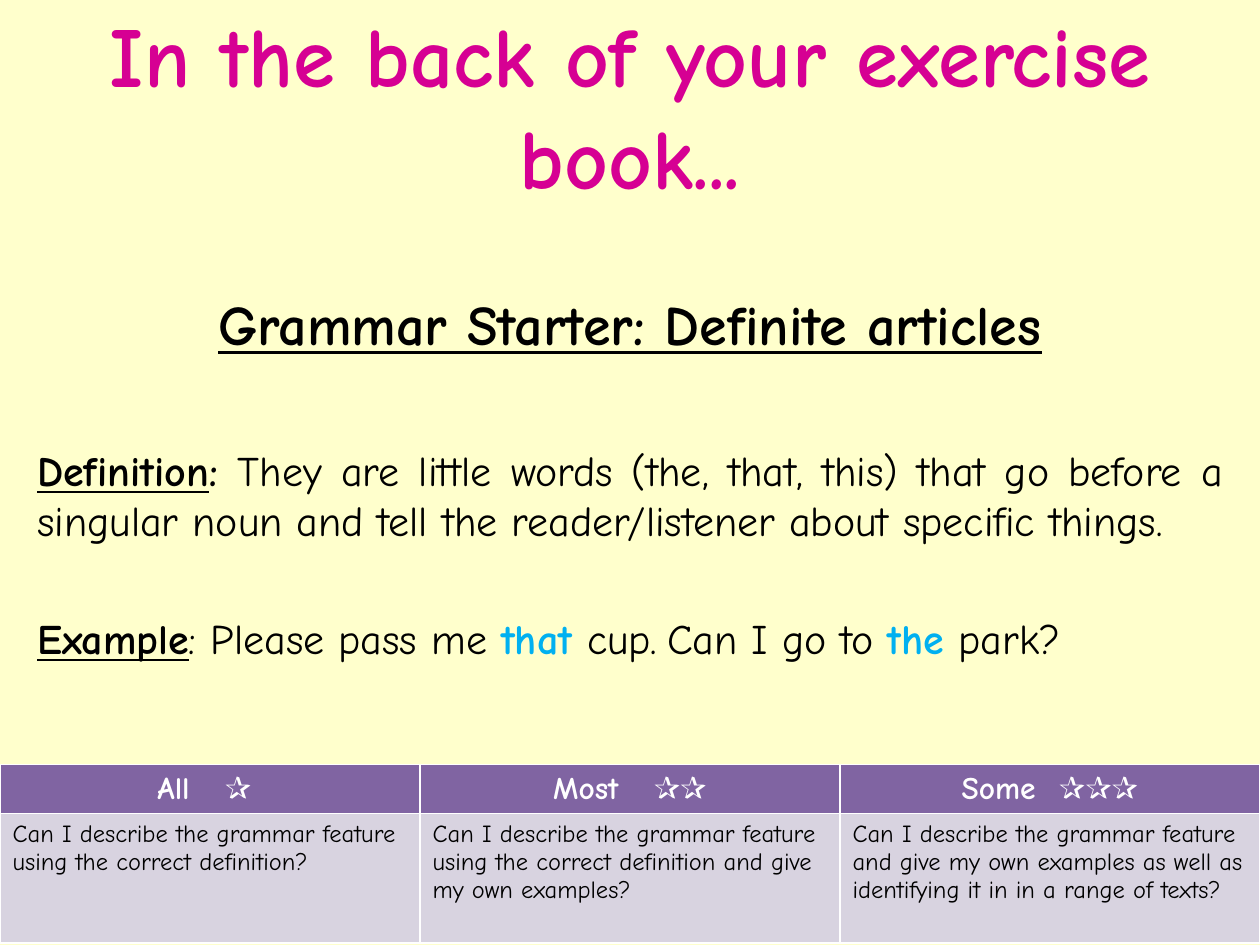
"""Builds a grammar starter slide on definite articles."""
from lxml import etree
from pptx import Presentation
from pptx import util as u
from pptx.dml.color import RGBColor
from pptx.enum import text
from pptx.oxml import ns

FONT = "Comic Neue"
CREAM = RGBColor(0xFF, 0xFF, 0xCC)
PINK = RGBColor(0xD6, 0x00, 0x93)
BLACK = RGBColor(0x00, 0x00, 0x00)
BLUE = RGBColor(0x00, 0xB0, 0xF0)
WHITE = RGBColor(0xFF, 0xFF, 0xFF)
PURPLE = RGBColor(0x80, 0x64, 0xA2)
LILAC = RGBColor(0xD8, 0xD3, 0xE0)

WIDTH, HEIGHT = 720, 540
TABLE_TOP, ROW_HEIGHTS = 437, (24, 74)
EXAMPLE_TAB = 410

TITLE = "In the back of your exercise book..."
PLAIN, BOLD = {}, {"bold": True}
LABEL = {"bold": True, "underline": True}
ARTICLE = {"bold": True, "color": BLUE}
CENTER, JUSTIFY = text.PP_ALIGN.CENTER, text.PP_ALIGN.JUSTIFY
BODY = [
    (CENTER, 32, None, [("Grammar Starter: Definite articles", LABEL)]),
    (JUSTIFY, 24, 50, [
        ("Definition", LABEL),
        (": ", BOLD),
        ("They are little words (the, that, this) that go before a singular "
         "noun and tell the reader/listener about specific things.", PLAIN),
    ]),
    (JUSTIFY, 24, 38.5, [
        ("Example", LABEL),
        (": Please pass me ", PLAIN),
        ("that ", ARTICLE),
        ("cup.\tCan I go to ", PLAIN),
        ("the", ARTICLE),
        (" park?", PLAIN),
    ]),
]
LEVELS = [
    ("All", 13.7, "✰ ", "Can I describe the grammar feature using the correct definition?"),
    ("Most", 13.7, "✰✰", "Can I describe the grammar feature using the correct "
     "definition and give my own examples?"),
    ("Some", 6.9, "✰✰✰", "Can I describe the grammar feature and give my own "
     "examples as well as identifying it in in a range of texts?"),
]


def add_span(para, words, size, color=BLACK, bold=False, underline=False):
    span = para.add_run()
    span.text = words
    font = span.font
    font.name, font.size = FONT, u.Pt(size)
    font.bold, font.underline = bold, underline
    font.color.rgb = color
    return span


def place(box, left, top, width, height):
    box.left, box.top = u.Pt(left), u.Pt(top)
    box.width, box.height = u.Pt(width), u.Pt(height)
    box.text_frame.word_wrap = True
    box.text_frame.auto_size = text.MSO_AUTO_SIZE.NONE


def clear_bullet(para, tab):
    props = para._p.get_or_add_pPr()
    props.set("marL", "0")
    props.set("indent", "0")
    etree.SubElement(props, ns.qn("a:buNone"))
    tabs = etree.SubElement(props, ns.qn("a:tabLst"))
    etree.SubElement(tabs, ns.qn("a:tab"), pos=str(u.Pt(tab)), algn="l")


def fill_body(frame):
    for index, (align, size, gap, spans) in enumerate(BODY):
        para = frame.add_paragraph() if index else frame.paragraphs[0]
        para.alignment = align
        if gap:
            para.space_before = u.Pt(gap)
        clear_bullet(para, EXAMPLE_TAB)
        for words, style in spans:
            add_span(para, words, size, **style)


def add_levels(page):
    frame = page.shapes.add_table(len(ROW_HEIGHTS), len(LEVELS), 0, u.Pt(TABLE_TOP),
                                  u.Pt(WIDTH), u.Pt(sum(ROW_HEIGHTS)))
    table = frame.table
    for row, height in zip(table.rows, ROW_HEIGHTS):
        row.height = u.Pt(height)
    for column, (name, gap, stars, question) in enumerate(LEVELS):
        head, detail = table.cell(0, column), table.cell(1, column)
        for cell, color in ((head, PURPLE), (detail, LILAC)):
            cell.fill.solid()
            cell.fill.fore_color.rgb = color
        para = head.text_frame.paragraphs[0]
        para.alignment = CENTER
        add_span(para, name, 18, WHITE, True)
        space = add_span(para, " ", 18, WHITE, True)
        space.font._element.set("spc", str(round(gap * 100)))
        add_span(para, stars, 18, WHITE, True)
        add_span(detail.text_frame.paragraphs[0], question, 14)


def main():
    deck = Presentation()
    deck.slide_width, deck.slide_height = u.Pt(WIDTH), u.Pt(HEIGHT)
    page = deck.slides.add_slide(deck.slide_layouts[1])
    page.background.fill.solid()
    page.background.fill.fore_color.rgb = CREAM

    title, body = page.placeholders
    place(title, 0, 1.5, WIDTH, 116)
    title.text_frame.vertical_anchor = text.MSO_ANCHOR.MIDDLE
    title.text_frame.paragraphs[0].alignment = CENTER
    add_span(title.text_frame.paragraphs[0], TITLE, 48.6, PINK, True)

    place(body, 14, 162, 692, 348.5)
    fill_body(body.text_frame)
    add_levels(page)
    deck.save("out.pptx")


if __name__ == "__main__":
    main()
